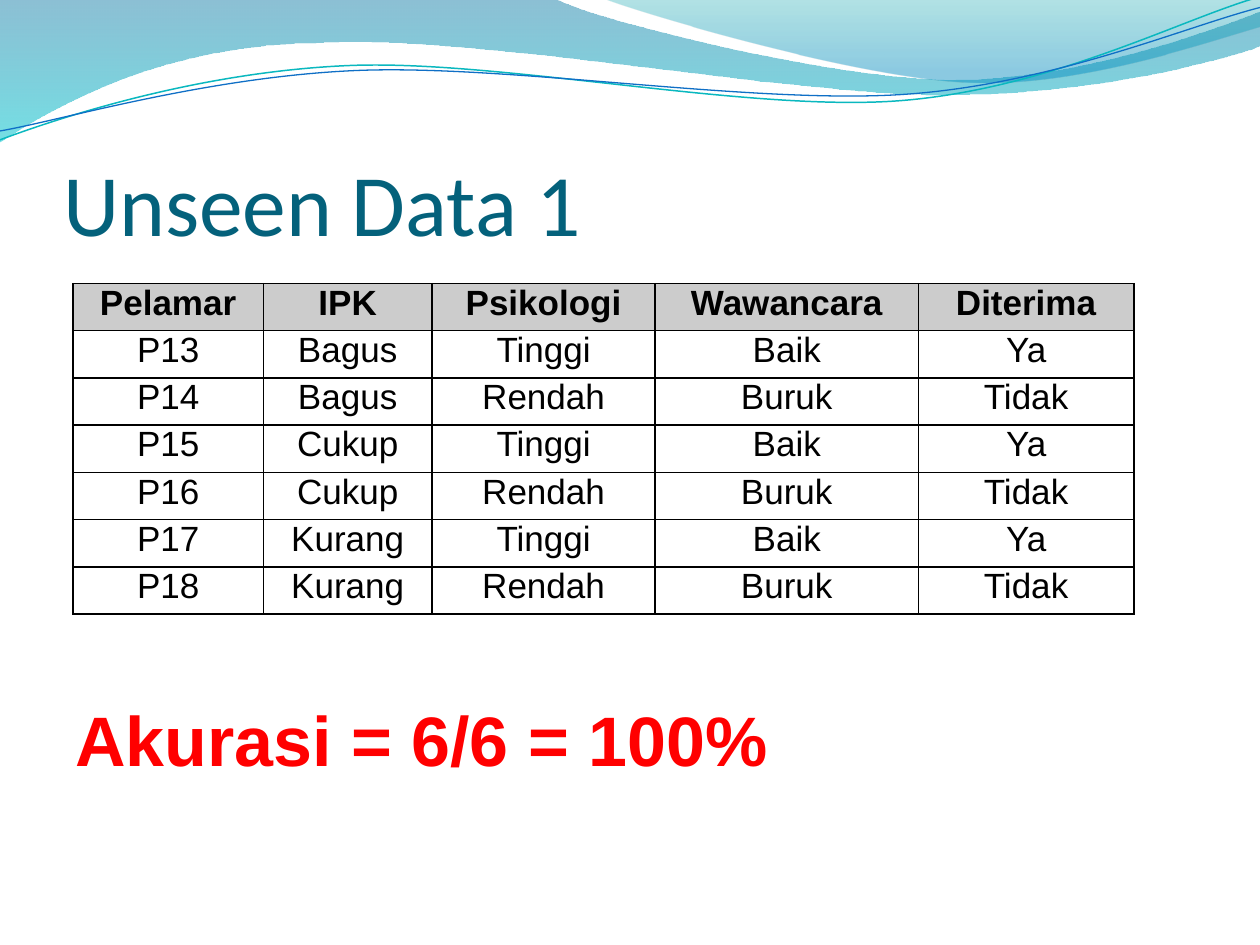
import math
from dataclasses import dataclass

import pptx
import pptx.dml.color
import pptx.enum.text
import pptx.oxml
import pptx.oxml.ns
import pptx.util
from pptx.util import Inches

Align = pptx.enum.text.PP_ALIGN
Anchor = pptx.enum.text.MSO_ANCHOR


@dataclass(frozen=True)
class Theme:
    title_color: str = "04617B"
    text_color: str = "000000"
    accent_color: str = "FF0000"
    header_fill: str = "CCCCCC"
    border_color: str = "000000"
    title_font: str = "Calibri"
    body_font: str = "Arial"
    title_size: int = 50
    table_size: int = 20
    result_size: int = 40
    border_width: int = 1


THEME = Theme()

LEFT_WAVE = [
    [(0, -0.01)], [(4.4, -0.01)],
    [(4.76, 0.17), (6.64, 0.63), (7.58, 0.63)],
    [(8.53, 0.63), (9.58, 0.26), (10, 0.09)],
    [(10.01, 0.36)],
    [(9.83, 0.44), (8.7, 0.76), (7.46, 0.75)],
    [(6.22, 0.75), (3.82, 0.28), (2.57, 0.34)],
    [(1.29, 0.35), (0.46, 0.83), (-0.01, 1.13)],
]
RIGHT_WAVE = [
    [(4.79, -0.01)],
    [(5.09, 0.11), (6.82, 0.62), (7.69, 0.65)],
    [(8.56, 0.69), (9.61, 0.32), (10, 0.21)],
    [(10, 0)],
]
TEAL_CURVE = [
    [(0, 1.11)],
    [(0.48, 0.93), (1.58, 0.57), (2.77, 0.52)],
    [(3.95, 0.47), (5.93, 0.89), (7.13, 0.8)],
    [(8.33, 0.71), (9.38, 0.15), (9.98, -0.02)],
]
BLUE_CURVE = [
    [(0, 1.04)],
    [(0.47, 0.96), (1.64, 0.61), (2.83, 0.56)],
    [(4.03, 0.51), (5.97, 0.83), (7.17, 0.75)],
    [(8.36, 0.67), (9.41, 0.21), (10, 0.06)],
]
CURVE_TILT = -2.7

COLUMN_WIDTHS = [1.51, 1.34, 1.77, 2.09, 1.71]
ROW_HEIGHT = 0.375
APPLICANTS = [
    ["Pelamar", "IPK", "Psikologi", "Wawancara", "Diterima"],
    ["P13", "Bagus", "Tinggi", "Baik", "Ya"],
    ["P14", "Bagus", "Rendah", "Buruk", "Tidak"],
    ["P15", "Cukup", "Tinggi", "Baik", "Ya"],
    ["P16", "Cukup", "Rendah", "Buruk", "Tidak"],
    ["P17", "Kurang", "Tinggi", "Baik", "Ya"],
    ["P18", "Kurang", "Rendah", "Buruk", "Tidak"],
]


def rgb(value):
    return pptx.dml.color.RGBColor.from_string(value)


def drawing_element(tag, attributes="", content=""):
    namespace = pptx.oxml.ns.nsdecls("a")
    return pptx.oxml.parse_xml(f"<a:{tag} {namespace} {attributes}>{content}</a:{tag}>")


def style_paragraph(paragraph, font, size, color, bold=False, align=Align.LEFT):
    paragraph.alignment = align
    paragraph.font.name = font
    paragraph.font.size = pptx.util.Pt(size)
    paragraph.font.color.rgb = rgb(color)
    paragraph.font.bold = bold


def rotate_outline(outline, degrees, center):
    angle = math.radians(degrees)
    turn = complex(math.cos(angle), math.sin(angle))
    middle = complex(*center)

    def rotate(point):
        turned = middle + (complex(*point) - middle) * turn
        return turned.real, turned.imag

    return [[rotate(point) for point in segment] for segment in outline]


def add_outline(slide, outline, closed):
    points = [(Inches(x), Inches(y)) for segment in outline for x, y in segment]
    builder = slide.shapes.build_freeform(*points[0])
    builder.add_line_segments(points[1:], close=closed)
    shape = builder.convert_to_shape()
    shape.shadow.inherit = False
    lines = iter(list(shape._element.spPr.iter(pptx.oxml.ns.qn("a:lnTo"))))
    for segment in outline[1:]:
        members = [next(lines) for _ in segment]
        if len(members) == 3:
            curve = drawing_element("cubicBezTo")
            members[0].addprevious(curve)
            for line in members:
                curve.append(line[0])
                line.getparent().remove(line)
    return shape


def add_wave(slide, outline, stops):
    shape = add_outline(slide, outline, closed=True)
    shape.line.fill.background()
    shape.fill.gradient()
    shape.fill.gradient_angle = 270
    for stop, (position, color, _) in zip(shape.fill.gradient_stops, stops):
        stop.position = position
        stop.color.rgb = rgb(color)
    colors = list(shape._element.spPr.iter(pptx.oxml.ns.qn("a:srgbClr")))
    for element, (_, _, opacity) in zip(colors, stops):
        element.append(drawing_element("alpha", f'val="{opacity * 1000}"'))


def add_curve(slide, outline, center, color, width):
    shape = add_outline(slide, rotate_outline(outline, -CURVE_TILT, center), closed=False)
    shape.rotation = CURVE_TILT
    shape.fill.background()
    shape.line.color.rgb = rgb(color)
    shape.line.width = pptx.util.Pt(width)


def set_title(slide, text):
    title = slide.shapes.title
    title.left, title.top = Inches(0.5), Inches(0.77)
    title.width, title.height = Inches(9), Inches(1.25)
    frame = title.text_frame
    frame.text = text
    frame.vertical_anchor = Anchor.BOTTOM
    frame.margin_left = frame.margin_right = frame.margin_bottom = 0
    frame.margin_top = Inches(0.05)
    style_paragraph(frame.paragraphs[0], THEME.title_font, THEME.title_size, THEME.title_color)


def add_borders(cell):
    properties = cell._tc.get_or_add_tcPr()
    width = pptx.util.Pt(THEME.border_width)
    fill = f'<a:solidFill><a:srgbClr val="{THEME.border_color}"/></a:solidFill>'
    for side in "LRTB":
        properties.append(drawing_element(f"ln{side}", f'w="{width}"', fill))


def format_cell(cell, text, is_header):
    cell.text = text
    cell.margin_left = cell.margin_right = Inches(0.07)
    cell.margin_top = cell.margin_bottom = 0
    style_paragraph(cell.text_frame.paragraphs[0], THEME.body_font, THEME.table_size,
                    THEME.text_color, is_header, Align.CENTER)
    add_borders(cell)
    if is_header:
        cell.fill.solid()
        cell.fill.fore_color.rgb = rgb(THEME.header_fill)
    else:
        cell.fill.background()


def add_applicant_table(slide):
    table = slide.shapes.add_table(
        len(APPLICANTS), len(COLUMN_WIDTHS), Inches(0.58), Inches(2.25),
        Inches(sum(COLUMN_WIDTHS)), Inches(ROW_HEIGHT * len(APPLICANTS)),
    ).table
    table.horz_banding = False
    for column, width in zip(table.columns, COLUMN_WIDTHS):
        column.width = Inches(width)
    for row_index, values in enumerate(APPLICANTS):
        table.rows[row_index].height = Inches(ROW_HEIGHT)
        for column_index, text in enumerate(values):
            format_cell(table.cell(row_index, column_index), text, row_index == 0)


def add_result(slide, text):
    box = slide.shapes.add_textbox(Inches(0.5), Inches(5.48), Inches(9.08), Inches(0.77))
    frame = box.text_frame
    frame.word_wrap = True
    frame.auto_size = pptx.enum.text.MSO_AUTO_SIZE.SHAPE_TO_FIT_TEXT
    frame.text = text
    style_paragraph(frame.paragraphs[0], THEME.body_font, THEME.result_size,
                    THEME.accent_color, True, Align.JUSTIFY)


def main():
    presentation = pptx.Presentation()
    presentation.slide_width, presentation.slide_height = Inches(10), Inches(7.5)
    slide = presentation.slides.add_slide(presentation.slide_layouts[5])
    add_wave(slide, LEFT_WAVE, [(0, "0074A1", 45), (1, "00C6CF", 55)])
    add_wave(slide, RIGHT_WAVE, [(0, "00A1A9", 30), (0.8, "008BBF", 45)])
    add_curve(slide, TEAL_CURVE, (4.99, 0.58), "0AB8BF", 0.85)
    add_curve(slide, BLUE_CURVE, (5, 0.59), "0F6FC6", 0.75)
    set_title(slide, "Unseen Data 1")
    add_applicant_table(slide)
    add_result(slide, "Akurasi = 6/6 = 100%")
    presentation.save("out.pptx")


if __name__ == "__main__":
    main()
